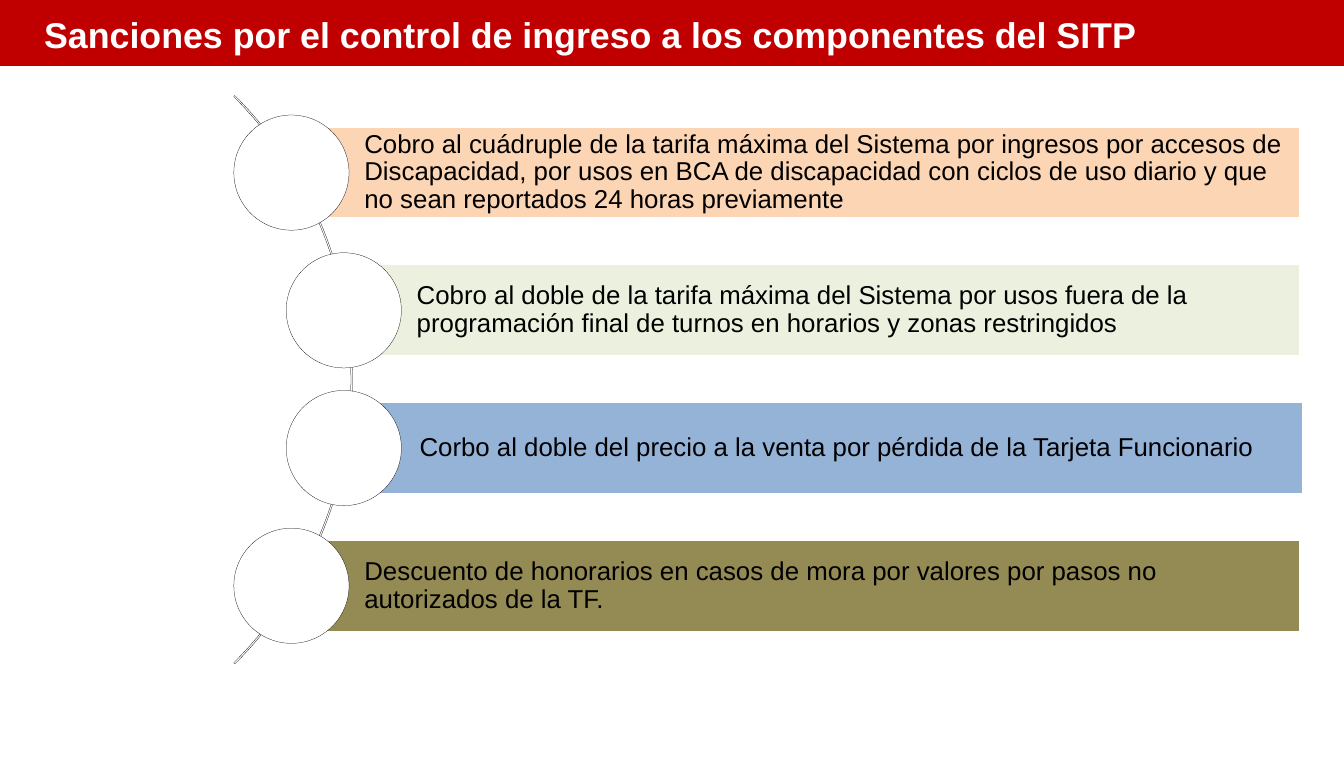
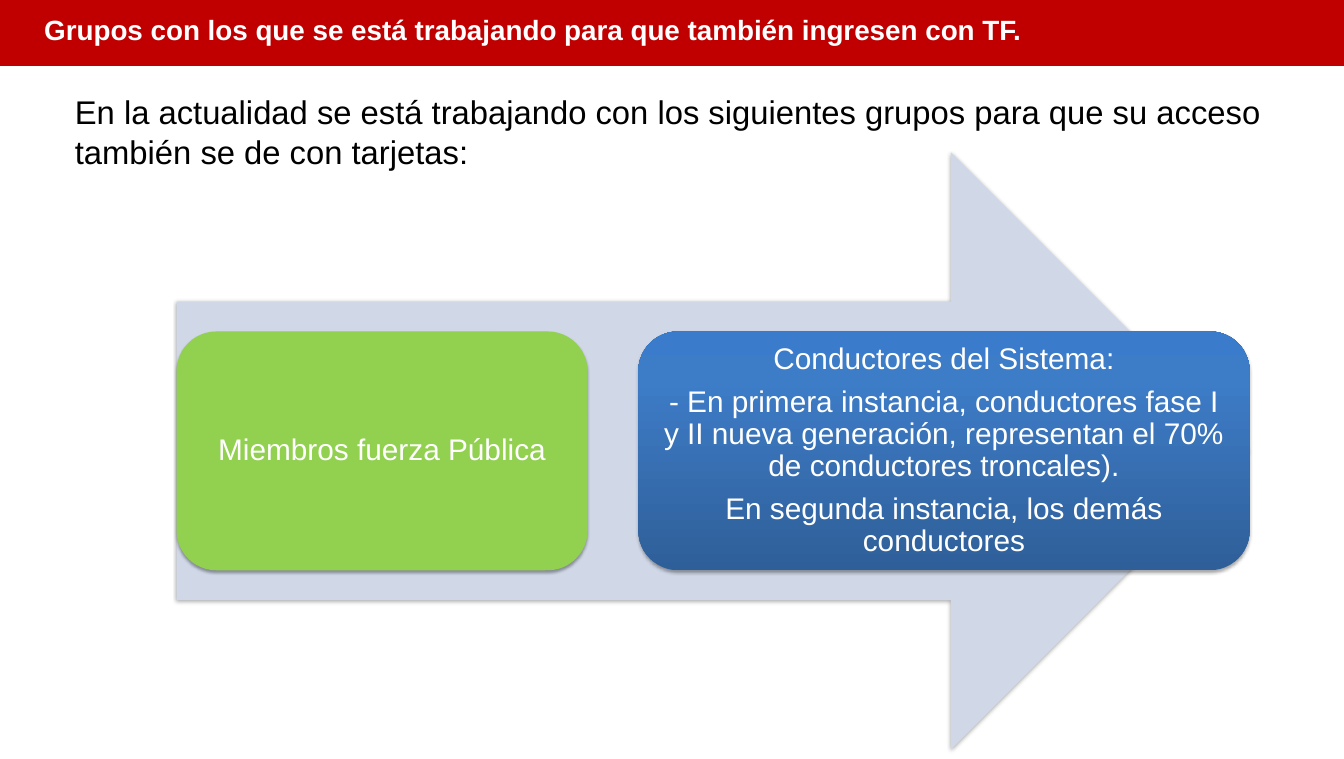
from copy import deepcopy
from dataclasses import dataclass

from lxml.etree import SubElement
from pptx import Presentation
from pptx.dml.color import RGBColor
from pptx.enum.shapes import MSO_SHAPE as Preset
from pptx.enum.text import MSO_ANCHOR as Anchor, PP_ALIGN as Align
from pptx.oxml.ns import qn
from pptx.shapes.autoshape import Shape
from pptx.slide import Slide
from pptx.text.text import TextFrame
from pptx.util import Cm, Length, Pt

# Shared style
FONT = "Arial"
SLIDE_W, SLIDE_H = Cm(47.73), Cm(26.95)
BAND_H = Cm(2.34)
WHITE = RGBColor(0xFF, 0xFF, 0xFF)
BLACK = RGBColor(0x00, 0x00, 0x00)
RED = RGBColor(0xC0, 0x00, 0x00)
PEACH = RGBColor(0xFC, 0xD5, 0xB5)
PALE_GREEN = RGBColor(0xEB, 0xF1, 0xDE)
SOFT_BLUE = RGBColor(0x95, 0xB3, 0xD7)
OLIVE = RGBColor(0x94, 0x8A, 0x54)
ARROW_GREY = RGBColor(0xD0, 0xD8, 0xE8)
LIME = RGBColor(0x92, 0xD0, 0x50)
DEEP_BLUE = RGBColor(0x2F, 0x5F, 0x99)
MID_BLUE = RGBColor(0x3D, 0x7C, 0xC7)
BRIGHT_BLUE = RGBColor(0x3A, 0x7C, 0xCB)

# Arc list geometry
BAR_TOP, BAR_PITCH, BAR_H = Cm(4.5), Cm(4.89), Cm(3.26)
BAR_RIGHT = Cm(46.18)
BAR_INSET = Cm(2.59)
CIRCLE_D = Cm(4.09)
OUTER_X, INNER_X = Cm(10.35), Cm(12.21)

# Arrow geometry
ARROW_X, ARROW_Y, ARROW_W, ARROW_H = Cm(6.27), Cm(5.41), Cm(38.1), Cm(21.2)
GROUP_H = Cm(8.48)


@dataclass(frozen=True)
class Sanction:
    text: str
    color: RGBColor
    center_x: Length
    shift: Length = Cm(0)


@dataclass(frozen=True)
class Group:
    left: Length
    width: Length
    colors: tuple[RGBColor, ...]
    lines: tuple[str, ...]


SANCTIONS = (
    Sanction("Cobro al cuádruple de la tarifa máxima del Sistema por ingresos por "
             "accesos de Discapacidad, por usos en BCA de discapacidad con ciclos de "
             "uso diario y que no sean reportados 24 horas previamente",
             PEACH, OUTER_X),
    Sanction("Cobro al doble de la tarifa máxima del Sistema por usos fuera de la "
             "programación final de turnos en horarios y zonas restringidos",
             PALE_GREEN, INNER_X),
    Sanction("Corbo al doble del precio a la venta por pérdida de la Tarjeta Funcionario",
             SOFT_BLUE, INNER_X, Cm(0.1)),
    Sanction("Descuento de honorarios en casos de mora por valores por pasos no "
             "autorizados de la TF.", OLIVE, OUTER_X),
)

GROUPS = (
    Group(ARROW_X, Cm(14.6), (LIME,), ("Miembros fuerza Pública",)),
    Group(Cm(22.67), Cm(21.71), (DEEP_BLUE, MID_BLUE, BRIGHT_BLUE),
          ("Conductores del Sistema:",
           "- En primera instancia, conductores fase I y II nueva generación, "
           "representan el 70% de conductores troncales).",
           "En segunda instancia, los demás conductores")),
)


def add_shape(slide: Slide, preset: Preset, left: int, top: int, width: int, height: int,
              fill: RGBColor | None = None, line: RGBColor | None = None,
              line_pt: float = 0.25) -> Shape:
    shape = slide.shapes.add_shape(preset, left, top, width, height)
    shape.shadow.inherit = False
    if fill is None:
        shape.fill.background()
    else:
        shape.fill.solid()
        shape.fill.fore_color.rgb = fill
    if line is None:
        shape.line.fill.background()
    else:
        shape.line.color.rgb = line
        shape.line.width = Pt(line_pt)
    return shape


def write(frame: TextFrame, lines: tuple[str, ...], size: int, color: RGBColor,
          bold: bool = False, align: Align = Align.LEFT, spacing: float = 1.0) -> None:
    frame.word_wrap = True
    for index, line in enumerate(lines):
        paragraph = frame.add_paragraph() if index else frame.paragraphs[0]
        paragraph.alignment = align
        paragraph.line_spacing = spacing
        if index:
            paragraph.space_before = Pt(size * 0.35)
        run = paragraph.add_run()
        run.text = line
        run.font.name = FONT
        run.font.size = Pt(size)
        run.font.bold = bold
        run.font.color.rgb = color


def set_insets(frame: TextFrame, inset: Length) -> None:
    frame.margin_left = frame.margin_right = inset
    frame.margin_top = frame.margin_bottom = inset
    frame.vertical_anchor = Anchor.MIDDLE


def add_soft_shadow(shape: Shape) -> None:
    effects = shape._element.spPr.find(qn("a:effectLst"))
    shadow = SubElement(effects, qn("a:outerShdw"), blurRad="40000", dist="23000",
                        dir="5400000", rotWithShape="0")
    color = SubElement(shadow, qn("a:srgbClr"), val=str(BLACK))
    SubElement(color, qn("a:alpha"), val="35000")


def fill_gradient(shape: Shape, colors: tuple[RGBColor, ...]) -> None:
    shape.fill.gradient()
    shape.fill.gradient_angle = 90
    stop_list = shape._element.spPr.find(".//" + qn("a:gsLst"))
    stop_list.append(deepcopy(stop_list[-1]))
    for stop, color, position in zip(shape.fill.gradient_stops, colors, (0, 0.8, 1)):
        stop.color.rgb = color
        stop.position = position


def add_titled_slide(deck: Presentation, title: str, size: int) -> Slide:
    slide = deck.slides.add_slide(deck.slide_layouts[6])
    add_shape(slide, Preset.RECTANGLE, 0, 0, SLIDE_W, BAND_H, RED)
    box = slide.shapes.add_textbox(Cm(1.32), Cm(0.33), Cm(42.24), Cm(1.8))
    write(box.text_frame, (title,), size, WHITE, bold=True)
    return slide


def add_sanction(slide: Slide, sanction: Sanction, top: int) -> None:
    bar = add_shape(slide, Preset.RECTANGLE, sanction.center_x + sanction.shift, top,
                    BAR_RIGHT - sanction.center_x, BAR_H, sanction.color, WHITE, 2)
    set_insets(bar.text_frame, Cm(0.18))
    bar.text_frame.margin_left = BAR_INSET
    write(bar.text_frame, (sanction.text,), 26, BLACK, spacing=0.9)
    add_shape(slide, Preset.OVAL, sanction.center_x - CIRCLE_D // 2,
              top + (BAR_H - CIRCLE_D) // 2, CIRCLE_D, CIRCLE_D, WHITE, BLACK)


def add_group(slide: Slide, group: Group) -> None:
    top = ARROW_Y + (ARROW_H - GROUP_H) // 2
    card = add_shape(slide, Preset.ROUNDED_RECTANGLE, group.left, top, group.width,
                     GROUP_H, group.colors[0])
    if len(group.colors) > 1:
        fill_gradient(card, group.colors)
    add_soft_shadow(card)
    set_insets(card.text_frame, Cm(0.3))
    write(card.text_frame, group.lines, 30, WHITE, align=Align.CENTER, spacing=0.9)


def build_sanctions(deck: Presentation) -> None:
    slide = add_titled_slide(
        deck, "Sanciones por el control de ingreso a los componentes del SITP", 36)
    # Arc behind the circles
    arc = add_shape(slide, Preset.BLOCK_ARC, Cm(-16.03), Cm(-0.79), Cm(28.55), Cm(28.55),
                    line=BLACK)
    for index, value in enumerate((189, 27, 0.002)):
        arc.adjustments[index] = value
    # Bars with their circles
    for row, sanction in enumerate(SANCTIONS):
        add_sanction(slide, sanction, BAR_TOP + row * BAR_PITCH)


def build_groups(deck: Presentation) -> None:
    slide = add_titled_slide(
        deck, "Grupos con los que se está trabajando para que también ingresen con TF.", 28)
    # Arrow and the groups on it
    arrow = add_shape(slide, Preset.RIGHT_ARROW, ARROW_X, ARROW_Y, ARROW_W, ARROW_H,
                      ARROW_GREY)
    add_soft_shadow(arrow)
    for group in GROUPS:
        add_group(slide, group)
    # Introduction
    intro = slide.shapes.add_textbox(Cm(2.41), Cm(3.15), Cm(42.9), Cm(3.63))
    write(intro.text_frame, ("En la actualidad se está trabajando con los siguientes grupos "
                             "para que su acceso también se de con tarjetas:",), 33, BLACK)


def main() -> None:
    deck = Presentation()
    deck.slide_width, deck.slide_height = SLIDE_W, SLIDE_H
    build_sanctions(deck)
    build_groups(deck)
    deck.save("out.pptx")


if __name__ == "__main__":
    main()
